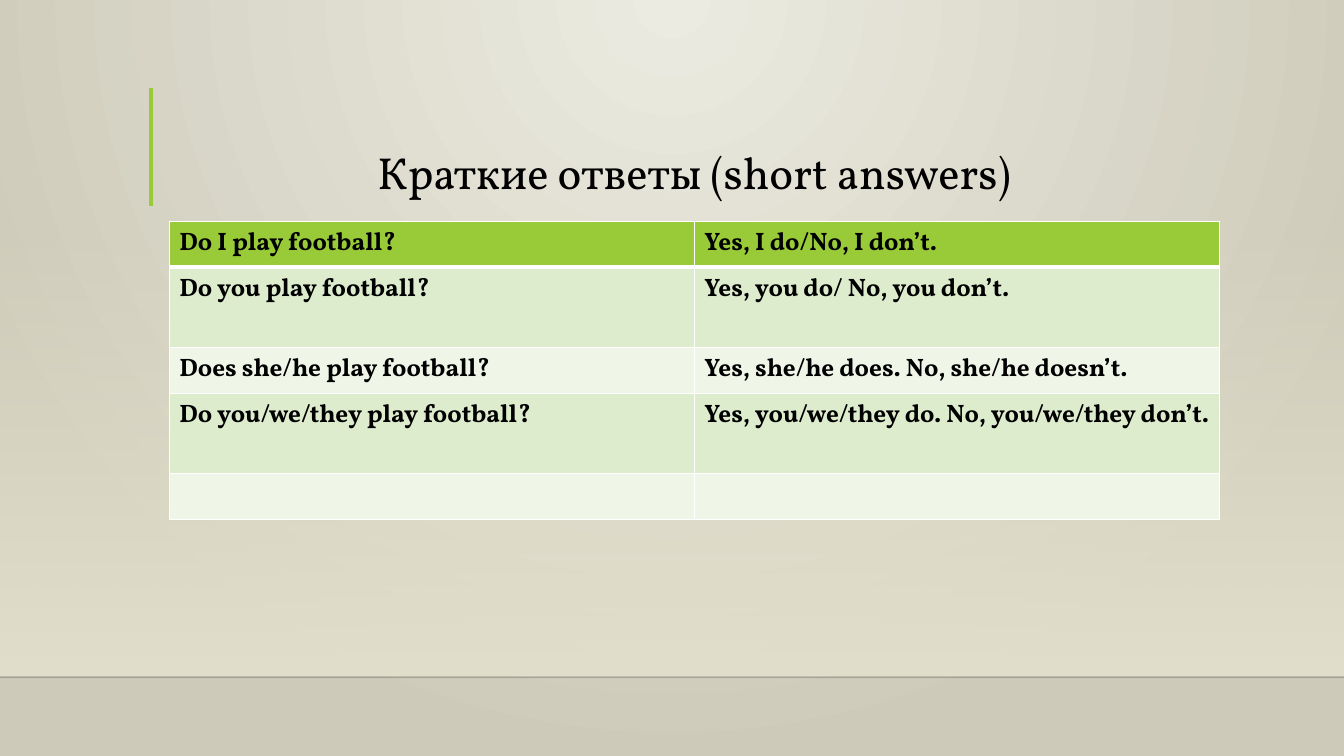
from lxml.etree import SubElement
from pptx import Presentation
from pptx.dml.color import RGBColor
from pptx.enum.shapes import MSO_CONNECTOR as Connector, MSO_SHAPE as Shape
from pptx.enum.text import MSO_ANCHOR as Anchor, PP_ALIGN as Align
from pptx.oxml.ns import qn
from pptx.util import Inches, Pt

WIDTH, HEIGHT = 13.33, 7.5
COLUMNS, ROWS = 160, 90


def paint(color, value):
    color.rgb = RGBColor.from_string(value)


def set_alpha(color_node, percent):
    SubElement(color_node, qn("a:alpha"), val=str(percent * 1000))


def write(frame, text, font="Vollkorn", size=18, color="000000", bold=False,
          align=Align.LEFT, spacing=1.0):
    frame.word_wrap = True
    paragraph = frame.paragraphs[0]
    paragraph.alignment = align
    paragraph.line_spacing = spacing
    run = paragraph.add_run()
    run.text = text
    run.font.name = font
    run.font.size = Pt(size)
    run.font.bold = bold
    paint(run.font.color, color)


class Deck:
    green = "99CB38"
    bands = ("DEECCE", "EFF6E8")
    sand = "E2DFCC"
    border = "FFFFFF"

    def __init__(self):
        self.presentation = Presentation()
        self.presentation.slide_width = Inches(WIDTH)
        self.presentation.slide_height = Inches(HEIGHT)
        self.slide = self.presentation.slides.add_slide(
            self.presentation.slide_layouts[6])

    def x(self, columns):
        return Inches(WIDTH * columns / COLUMNS)

    def y(self, rows):
        return Inches(HEIGHT * rows / ROWS)

    def area(self, left, top, width, height):
        return self.x(left), self.y(top), self.x(width), self.y(height)

    def gradient(self, fill, start, end):
        fill.gradient()
        for stop, value in zip(fill.gradient_stops, (start, end)):
            paint(stop.color, value)

    def backdrop(self, center, edge):
        self.gradient(self.slide.background.fill, center, edge)
        grad = next(self.slide.element.iter(qn("a:gradFill")))
        grad.remove(grad.find(qn("a:lin")))
        glow = SubElement(grad, qn("a:path"), path="circle")
        SubElement(glow, qn("a:fillToRect"),
                   l="43000", t="0", r="43000", b="100000")

    def haze(self, *area):
        haze = self.slide.shapes.add_shape(Shape.RECTANGLE, *self.area(*area))
        haze.shadow.inherit = False
        haze.line.fill.background()
        self.gradient(haze.fill, self.sand, self.sand)
        haze.fill.gradient_angle = 270
        set_alpha(next(haze.element.spPr.iter(qn("a:srgbClr"))), 0)

    def rule(self, left, top, right, bottom, color, width, alpha=100):
        rule = self.slide.shapes.add_connector(
            Connector.STRAIGHT, self.x(left), self.y(top),
            self.x(right), self.y(bottom))
        rule.line.width = Pt(width)
        paint(rule.line.color, color)
        properties = rule.element.spPr
        if alpha < 100:
            set_alpha(next(properties.iter(qn("a:srgbClr"))), alpha)
        SubElement(properties, qn("a:effectLst"))

    def title(self, text, *area):
        frame = self.slide.shapes.add_textbox(*self.area(*area)).text_frame
        frame.vertical_anchor = Anchor.BOTTOM
        write(frame, text, size=32, align=Align.CENTER, spacing=0.9)

    def edges(self, cell, **widths):
        properties = cell._tc.get_or_add_tcPr()
        for side in "LRTB":
            line = SubElement(properties, qn(f"a:ln{side}"),
                              w=str(Pt(widths.get(side, 1))))
            fill = SubElement(line, qn("a:solidFill"))
            SubElement(fill, qn("a:srgbClr"), val=self.border)

    def table(self, entries, heights, left, top, width):
        table = self.slide.shapes.add_table(
            len(entries), len(entries[0]),
            *self.area(left, top, width, sum(heights))).table
        table.first_row = table.horz_banding = False
        for index, (entry, height) in enumerate(zip(entries, heights)):
            table.rows[index].height = self.y(height)
            band = self.bands[(index - 1) % 2] if index else self.green
            for column, text in enumerate(entry):
                cell = table.cell(index, column)
                self.edges(cell, T=3 if index == 1 else 1,
                           B=1 if index else 3)
                cell.fill.solid()
                paint(cell.fill.fore_color, band)
                if text:
                    write(cell.text_frame, text, bold=True)


def main():
    answers = [
        ("Do I play football?", "Yes, I do/No, I don’t."),
        ("Do you play football?", "Yes, you do/ No, you don’t."),
        ("Does she/he play football?", "Yes, she/he does. No, she/he doesn’t."),
        ("Do you/we/they play football?",
         "Yes, you/we/they do. No, you/we/they don’t."),
        ("", ""),
    ]
    single, double = 5.4, 9.6
    left, width = 20.16, 125

    deck = Deck()
    deck.backdrop("ECEBE1", "CDCAB9")
    deck.haze(0, 26.4, COLUMNS, 54)
    deck.rule(0, 80.64, COLUMNS, 80.64, "000001", 1, alpha=20)
    deck.rule(18, 10.44, 18, 24.48, deck.green, 3)
    deck.title("Краткие ответы (short answers)", left, 10.56, width, 13.8)
    deck.table(answers, (single, double, single, double, single),
               left, 26.4, width)
    deck.presentation.save("out.pptx")


if __name__ == "__main__":
    main()
